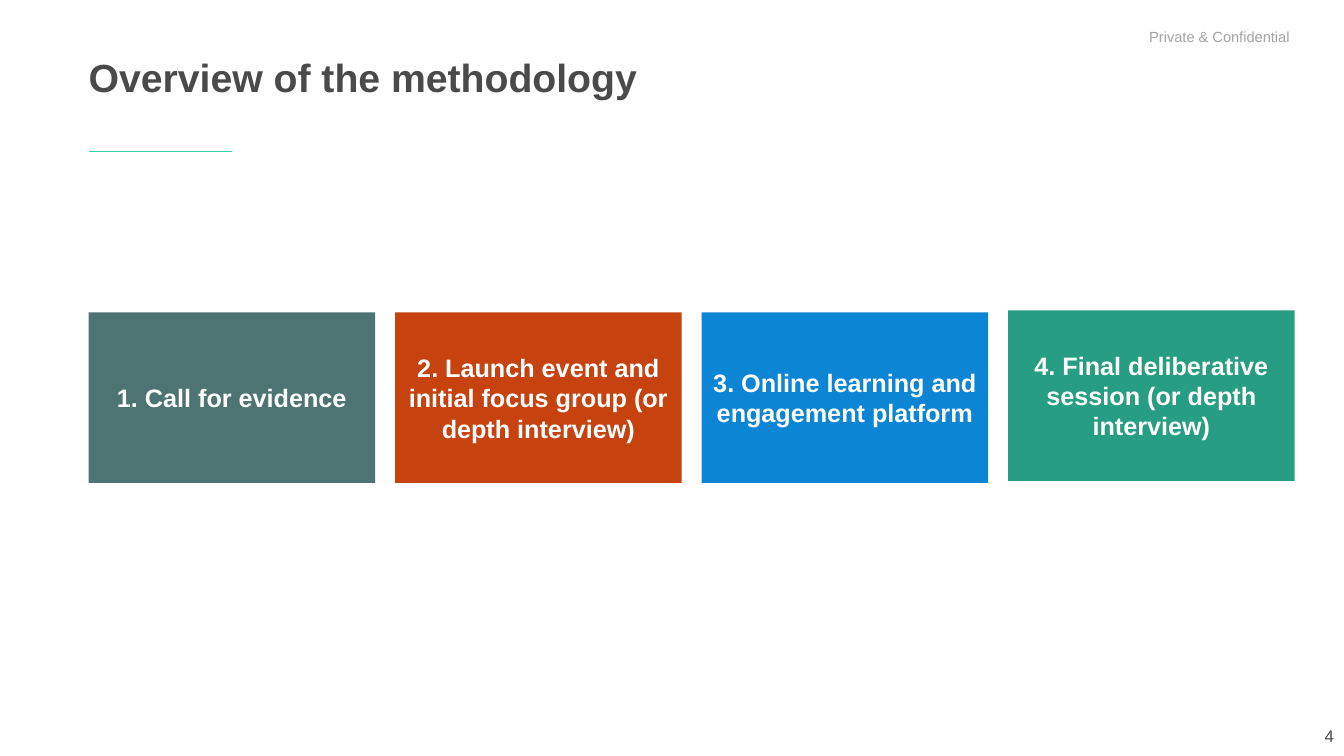
import pptx
import pptx.dml.color
import pptx.enum.shapes
import pptx.enum.text
import pptx.util
from lxml import etree
from pptx.util import Inches

ALIGN = pptx.enum.text.PP_ALIGN
ANCHOR = pptx.enum.text.MSO_ANCHOR
GREY = "4A4A4A"
LEFT = 0.88
STAGE_GAP = 0.2
STAGES = [
    # text, fill, top offset
    ("1. Call for evidence", "4E7373", 0),
    ("2. Launch event and initial focus group (or depth interview)", "C6420F", 0),
    ("3. Online learning and engagement platform", "0D85D5", 0),
    ("4. Final deliberative session (or depth interview)", "279D83", -0.02),
]


def rgb(hex_colour):
    return pptx.dml.color.RGBColor.from_string(hex_colour)


def write(box, text, size, colour, align=ALIGN.LEFT, bold=False, anchor=ANCHOR.MIDDLE):
    frame = box.text_frame
    frame.word_wrap = True
    frame.vertical_anchor = anchor
    frame.text = text
    paragraph = frame.paragraphs[0]
    paragraph.alignment = align
    font = paragraph.runs[0].font
    font.name = "Arial"
    font.size = pptx.util.Pt(size)
    font.bold = bold
    font.color.rgb = rgb(colour)


def add_block(slide, left, top, width, height, fill):
    """Add a plain filled rectangle without outline or shadow."""
    block = slide.shapes.add_shape(
        pptx.enum.shapes.MSO_SHAPE.RECTANGLE,
        Inches(left), Inches(top), Inches(width), Inches(height))
    block.shadow.inherit = False
    block.fill.solid()
    block.fill.fore_color.rgb = rgb(fill)
    block.line.fill.background()
    return block


def add_title(slide, left, top, width, height):
    title = slide.shapes.add_textbox(
        Inches(left), Inches(top), Inches(width), Inches(height))
    write(title, "Overview of the methodology", 28, GREY, bold=True, anchor=ANCHOR.TOP)
    title.text_frame.margin_left = 0
    title.text_frame.paragraphs[0].line_spacing = 0.9


def add_title_rule(slide, left, top, width):
    rule = slide.shapes.add_connector(
        pptx.enum.shapes.MSO_CONNECTOR.STRAIGHT,
        Inches(left), Inches(top), Inches(left + width), Inches(top))
    rule.line.color.rgb = rgb("37CEAC")
    rule.line.width = pptx.util.Pt(1)
    properties = rule.element.spPr
    etree.SubElement(properties, pptx.oxml.ns.qn("a:effectLst"))


def add_confidential_label(slide, left, top, width, height):
    label = add_block(slide, left, top, width, height, "FFFFFF")
    write(label, "Private & Confidential", 10.5, "A4A4A4")


def add_page_number(slide, left, top, width, height):
    number = slide.shapes.add_textbox(
        Inches(left), Inches(top), Inches(width), Inches(height))
    write(number, "4", 12, GREY, ALIGN.RIGHT)


def add_stages(slide, left, top, width, height):
    """Spread the methodology stages evenly over the given box."""
    stage_width = (width - STAGE_GAP * (len(STAGES) - 1)) / len(STAGES)
    for index, (text, fill, offset) in enumerate(STAGES):
        stage_left = left + index * (stage_width + STAGE_GAP)
        stage = add_block(slide, stage_left, top + offset, stage_width, height, fill)
        write(stage, text, 18, "FFFFFF", ALIGN.CENTER, bold=True)


def main():
    deck = pptx.Presentation()
    deck.slide_width = Inches(13.33)
    deck.slide_height = Inches(7.5)
    slide = deck.slides.add_slide(deck.slide_layouts[6])
    add_page_number(slide, 10.33, 7.1, 3, 0.4)
    add_confidential_label(slide, 11.3, 0.19, 1.63, 0.35)
    add_title_rule(slide, LEFT, 1.5, 1.42)
    add_title(slide, LEFT, 0.53, 11.7, 0.87)
    add_stages(slide, LEFT, 3.1, 11.96, 1.69)
    deck.save("out.pptx")


if __name__ == "__main__":
    main()
